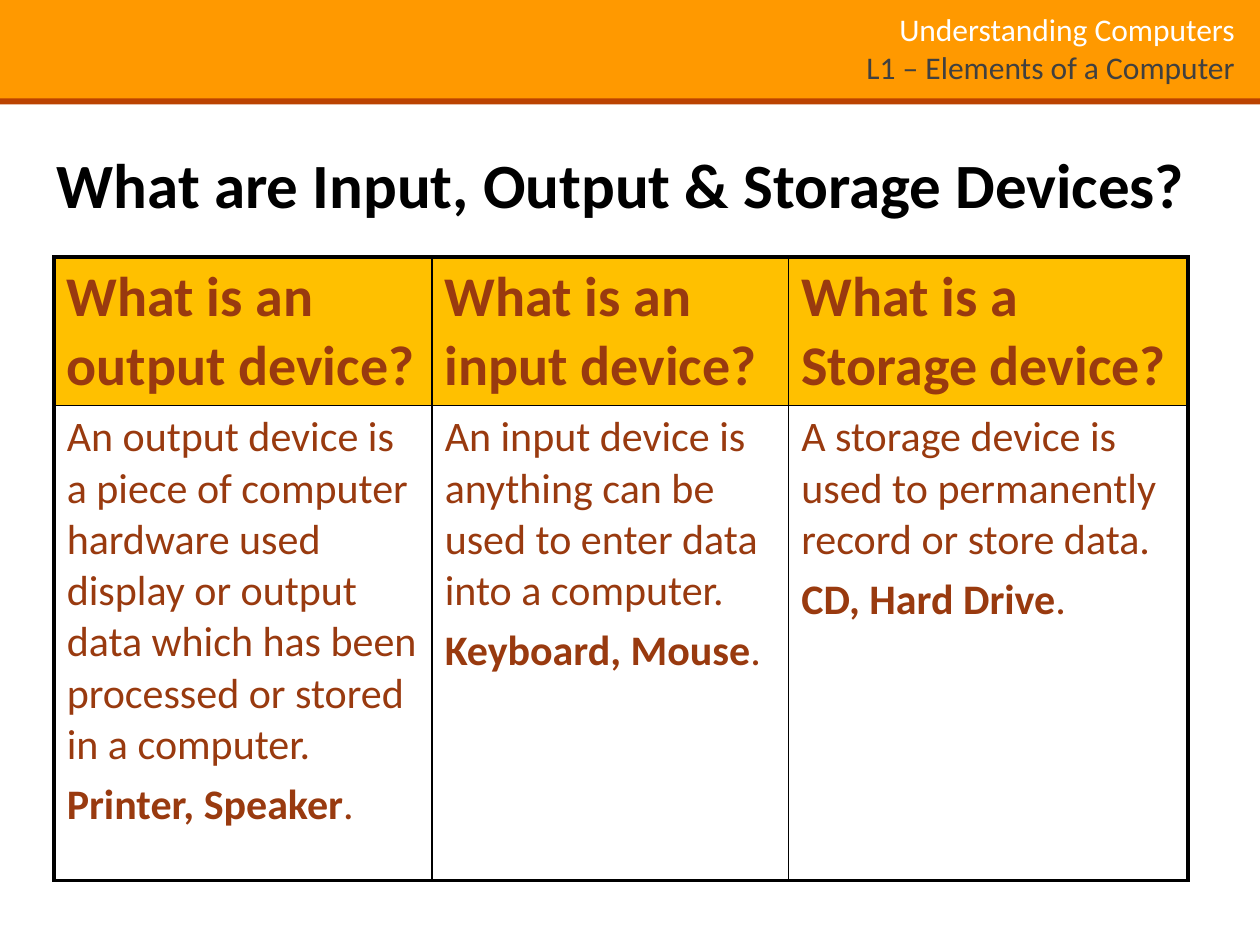
from dataclasses import dataclass

import pptx
import pptx.dml.color
import pptx.enum.shapes
import pptx.enum.text
import pptx.oxml
import pptx.oxml.ns
import pptx.util
from pptx.util import Inches

ALIGN = pptx.enum.text.PP_ALIGN
ANCHOR = pptx.enum.text.MSO_ANCHOR


@dataclass(frozen=True)
class Theme:
    font: str = "Calibri"
    orange: str = "FF9900"
    rust: str = "BB4301"
    gold: str = "FFC000"
    brown: str = "993A0F"
    white: str = "FFFFFF"
    gray: str = "404040"
    black: str = "000000"
    title_size: float = 36
    heading_size: float = 32
    body_size: float = 24
    banner_size: float = 18
    paragraph_gap: float = 4.8
    outer_line: float = 2.25
    inner_line: float = 1


@dataclass(frozen=True)
class Bar:
    top: float
    height: float
    color: str


@dataclass(frozen=True)
class Device:
    heading: str
    definition: str
    examples: str
    width: float


THEME = Theme()
BARS = [Bar(0.77, 0.06, THEME.rust), Bar(-0.01, 0.79, THEME.orange)]
DEVICES = [
    Device(
        "What is an output device?",
        "An output device is a piece of computer hardware used display or output "
        "data which has been processed or stored in a computer.",
        "Printer, Speaker",
        3,
    ),
    Device(
        "What is an input device?",
        "An input device is anything can be used to enter data into a computer.",
        "Keyboard, Mouse",
        2.83,
    ),
    Device(
        "What is a Storage device?",
        "A storage device is used to permanently record or store data.",
        "CD, Hard Drive",
        3.17,
    ),
]
ROW_HEIGHTS = [1.18, 3.77]


def rgb(color: str) -> pptx.dml.color.RGBColor:
    return pptx.dml.color.RGBColor.from_string(color)


def add_text(p, text: str, *, size: float, color: str, bold: bool = False) -> None:
    r = p.add_run()
    r.text = text
    r.font.name = THEME.font
    r.font.size = pptx.util.Pt(size)
    r.font.bold = bold
    r.font.color.rgb = rgb(color)


def add_bar(s, bar: Bar) -> None:
    sp = s.shapes.add_shape(
        pptx.enum.shapes.MSO_SHAPE.RECTANGLE,
        Inches(-0.04), Inches(bar.top), Inches(10.06), Inches(bar.height),
    )
    sp.shadow.inherit = False
    sp.fill.solid()
    sp.fill.fore_color.rgb = rgb(bar.color)
    sp.line.fill.background()


def add_banner(s) -> None:
    sp = s.shapes.add_textbox(Inches(4.99), Inches(0.03), Inches(4.91), Inches(0.69))
    tf = sp.text_frame
    tf.word_wrap = True
    p = tf.paragraphs[0]
    p.alignment = ALIGN.RIGHT
    add_text(p, "Understanding Computers", size=THEME.banner_size, color=THEME.white)
    p.add_line_break()
    add_text(p, "L1 – Elements of a Computer", size=THEME.banner_size, color=THEME.gray)


def format_title(s) -> None:
    sp = s.shapes.title
    sp.left, sp.top = Inches(0.35), Inches(1.05)
    sp.width, sp.height = Inches(9.29), Inches(0.81)
    tf = sp.text_frame
    tf.word_wrap = True
    tf.auto_size = pptx.enum.text.MSO_AUTO_SIZE.NONE
    tf.vertical_anchor = ANCHOR.MIDDLE
    p = tf.paragraphs[0]
    p.alignment = ALIGN.LEFT
    add_text(p, "What are Input, Output & Storage Devices?",
             size=THEME.title_size, color=THEME.black, bold=True)


def set_borders(cell, row: int, col: int) -> None:
    outer = {
        "lnL": col == 0,
        "lnR": col == len(DEVICES) - 1,
        "lnT": row == 0,
        "lnB": row == len(ROW_HEIGHTS) - 1,
    }
    tc_pr = cell._tc.get_or_add_tcPr()
    for i, (tag, is_outer) in enumerate(outer.items()):
        width = pptx.util.Pt(THEME.outer_line if is_outer else THEME.inner_line)
        tc_pr.insert(i, pptx.oxml.parse_xml(
            f'<a:{tag} {pptx.oxml.ns.nsdecls("a")} w="{int(width)}">'
            f'<a:solidFill><a:srgbClr val="{THEME.black}"/></a:solidFill></a:{tag}>'
        ))


def style_cell(cell, row: int, col: int, fill: str) -> None:
    cell.vertical_anchor = ANCHOR.TOP
    cell.margin_left = cell.margin_right = Inches(0.1)
    cell.margin_top = cell.margin_bottom = Inches(0.05)
    cell.fill.solid()
    cell.fill.fore_color.rgb = rgb(fill)
    set_borders(cell, row, col)


def add_device_table(s) -> None:
    width = sum(device.width for device in DEVICES)
    table = s.shapes.add_table(
        len(ROW_HEIGHTS), len(DEVICES),
        Inches(0.43), Inches(2.04), Inches(width), Inches(sum(ROW_HEIGHTS)),
    ).table
    table.first_row = False
    table.horz_banding = False
    for row, height in zip(table.rows, ROW_HEIGHTS):
        row.height = Inches(height)
    for col, device in enumerate(DEVICES):
        table.columns[col].width = Inches(device.width)
        head, body = table.cell(0, col), table.cell(1, col)
        style_cell(head, 0, col, THEME.gold)
        style_cell(body, 1, col, THEME.white)
        add_text(head.text_frame.paragraphs[0], device.heading,
                 size=THEME.heading_size, color=THEME.brown, bold=True)
        tf = body.text_frame
        add_text(tf.paragraphs[0], device.definition,
                 size=THEME.body_size, color=THEME.brown)
        p = tf.add_paragraph()
        p.space_before = pptx.util.Pt(THEME.paragraph_gap)
        add_text(p, device.examples, size=THEME.body_size, color=THEME.brown, bold=True)
        add_text(p, ".", size=THEME.body_size, color=THEME.brown)


def main() -> None:
    prs = pptx.Presentation()
    prs.slide_width, prs.slide_height = Inches(10), Inches(7.5)
    s = prs.slides.add_slide(prs.slide_layouts[5])
    for bar in BARS:
        add_bar(s, bar)
    add_banner(s)
    format_title(s)
    add_device_table(s)
    prs.save("out.pptx")


if __name__ == "__main__":
    main()
